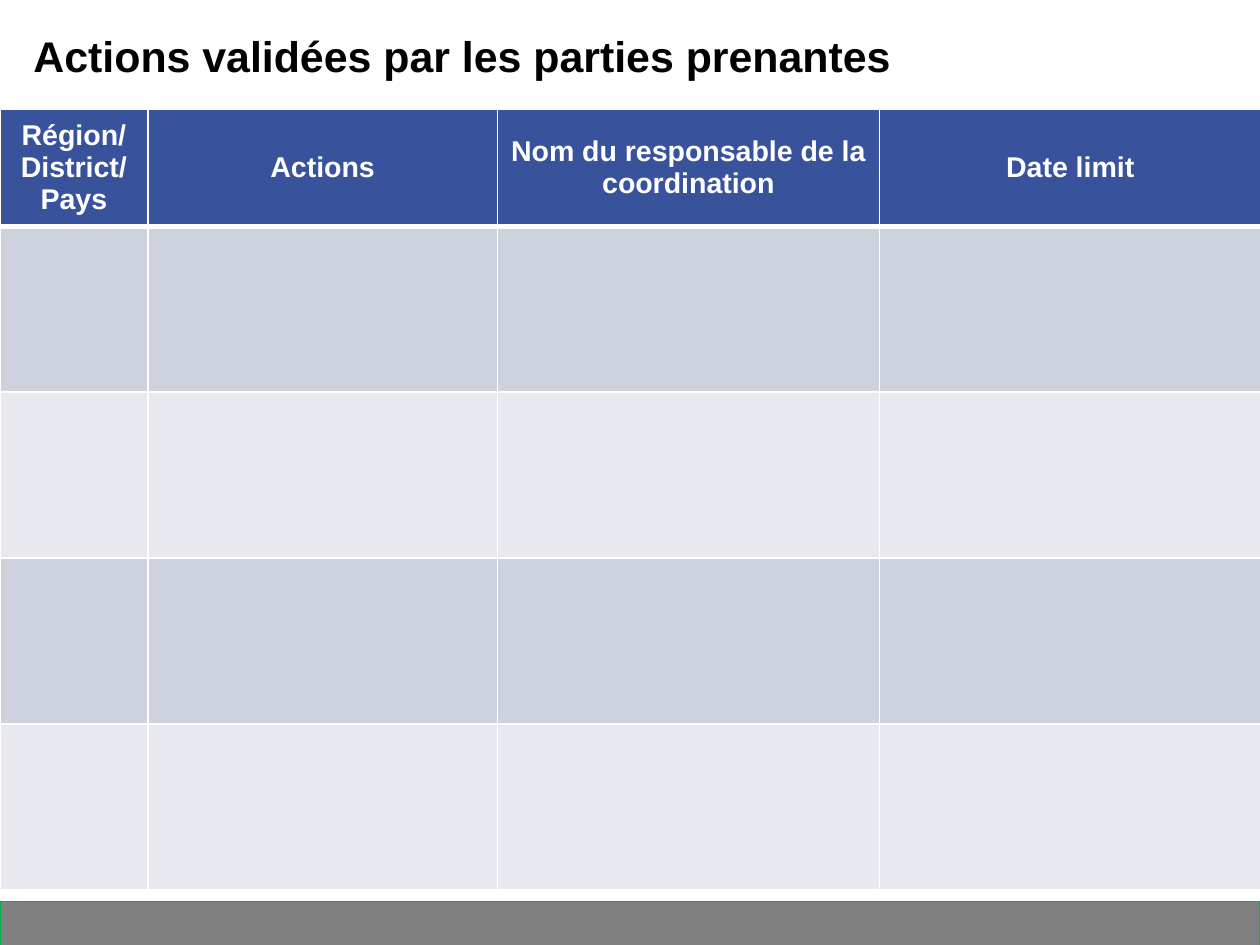
import dataclasses

import lxml.etree
import pptx
import pptx.dml.color
import pptx.enum.shapes
import pptx.enum.text
import pptx.oxml.ns
import pptx.slide
import pptx.table
import pptx.text.text
import pptx.util

Inches = pptx.util.Inches
RGBColor = pptx.dml.color.RGBColor
qn = pptx.oxml.ns.qn

WHITE = RGBColor(0xFF, 0xFF, 0xFF)
BLACK = RGBColor(0x00, 0x00, 0x00)
HEADER_BLUE = RGBColor(0x38, 0x52, 0x9C)
DARK_BAND = RGBColor(0xCE, 0xD1, 0xDE)
LIGHT_BAND = RGBColor(0xE8, 0xE9, 0xEF)
RULE_GRAY = RGBColor(0xC0, 0xC0, 0xC0)
FOOTER_GRAY = RGBColor(0x80, 0x80, 0x80)
FOOTER_GREEN = RGBColor(0x00, 0xB0, 0x50)

PAGE_WIDTH = 9.8
PAGE_HEIGHT = 7.35
HEADER_HEIGHT = 0.91
ROW_HEIGHT = 1.29
TABLE_TOP = 0.85


@dataclasses.dataclass(frozen=True)
class Column:
    heading: str
    width: float


COLUMNS = (
    Column("Région/District/Pays", 1.15),
    Column("Actions", 2.72),
    Column("Nom du responsable de la coordination", 2.97),
    Column("Date limit", 2.97),
)
ROW_FILLS = (HEADER_BLUE, DARK_BAND, LIGHT_BAND, DARK_BAND, LIGHT_BAND)


def add_span(
    para: pptx.text.text._Paragraph, text: str, size: float, color: RGBColor
) -> None:
    span = para.add_run()
    span.text = text
    span.font.name = "Arial"
    span.font.size = pptx.util.Pt(size)
    span.font.bold = True
    span.font.color.rgb = color


def add_footer(page: pptx.slide.Slide) -> None:
    rule = page.shapes.add_connector(
        pptx.enum.shapes.MSO_CONNECTOR.STRAIGHT,
        Inches(0), Inches(6.89), Inches(PAGE_WIDTH), Inches(6.89),
    )
    rule.line.color.rgb = RULE_GRAY
    rule.line.width = pptx.util.Pt(0.75)
    lxml.etree.SubElement(rule._element.spPr, qn("a:effectLst"))

    bar = page.shapes.add_shape(
        pptx.enum.shapes.MSO_SHAPE.RECTANGLE,
        Inches(0), Inches(7.01), Inches(PAGE_WIDTH), Inches(0.37),
    )
    bar.shadow.inherit = False
    bar.fill.solid()
    bar.fill.fore_color.rgb = FOOTER_GRAY
    bar.line.color.rgb = FOOTER_GREEN
    bar.line.width = pptx.util.Pt(0.75)


def format_title(page: pptx.slide.Slide) -> None:
    title = page.shapes.title
    title.left, title.top = Inches(0.16), Inches(0.18)
    title.width, title.height = Inches(7.25), Inches(0.5)
    box = title.text_frame
    box.word_wrap = True
    box.auto_size = pptx.enum.text.MSO_AUTO_SIZE.SHAPE_TO_FIT_TEXT
    box.vertical_anchor = pptx.enum.text.MSO_ANCHOR.TOP
    para = box.paragraphs[0]
    para.alignment = pptx.enum.text.PP_ALIGN.LEFT
    add_span(para, "Actions validées par les parties prenantes", 24, BLACK)


def set_borders(cell: pptx.table._Cell, top: float, bottom: float) -> None:
    properties = cell._tc.get_or_add_tcPr()
    for side, width in (("L", 1), ("R", 1), ("T", top), ("B", bottom)):
        line = lxml.etree.SubElement(properties, qn(f"a:ln{side}"))
        line.set("w", str(pptx.util.Pt(width)))
        fill = lxml.etree.SubElement(line, qn("a:solidFill"))
        lxml.etree.SubElement(fill, qn("a:srgbClr")).set("val", str(WHITE))


def add_action_table(page: pptx.slide.Slide) -> None:
    body_rows = len(ROW_FILLS) - 1
    table = page.shapes.add_table(
        len(ROW_FILLS), len(COLUMNS), Inches(0), Inches(TABLE_TOP),
        Inches(PAGE_WIDTH), Inches(HEADER_HEIGHT + body_rows * ROW_HEIGHT),
    ).table
    for index, column in enumerate(COLUMNS):
        table.columns[index].width = Inches(column.width)
    for row_index, color in enumerate(ROW_FILLS):
        row = table.rows[row_index]
        row.height = Inches(ROW_HEIGHT if row_index else HEADER_HEIGHT)
        for cell in row.cells:
            set_borders(
                cell,
                top=3 if row_index == 1 else 1,
                bottom=3 if row_index == 0 else 1,
            )
            cell.fill.solid()
            cell.fill.fore_color.rgb = color
    for cell, column in zip(table.rows[0].cells, COLUMNS):
        cell.vertical_anchor = pptx.enum.text.MSO_ANCHOR.MIDDLE
        para = cell.text_frame.paragraphs[0]
        para.alignment = pptx.enum.text.PP_ALIGN.CENTER
        add_span(para, column.heading, 16, WHITE)


def main() -> None:
    deck = pptx.Presentation()
    deck.slide_width = Inches(PAGE_WIDTH)
    deck.slide_height = Inches(PAGE_HEIGHT)
    page = deck.slides.add_slide(deck.slide_layouts.get_by_name("Title Only"))
    add_footer(page)
    format_title(page)
    add_action_table(page)
    deck.save("out.pptx")


if __name__ == "__main__":
    main()
